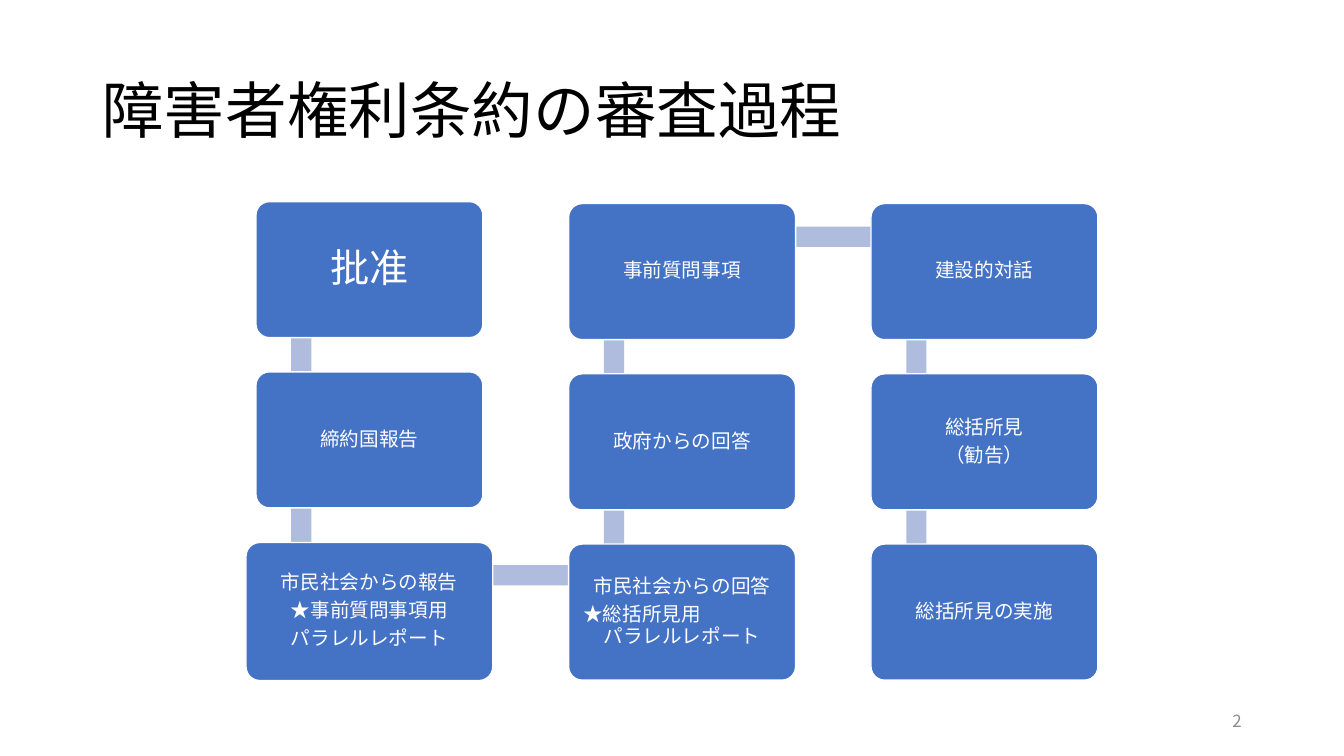
from lxml.etree import SubElement
from pptx import Presentation
from pptx.dml.color import RGBColor
from pptx.enum.shapes import MSO_SHAPE
from pptx.enum.text import MSO_ANCHOR, PP_ALIGN
from pptx.oxml.ns import qn
from pptx.util import Cm, Pt

FONT = "Noto Sans CJK JP"
BLACK = RGBColor(0x00, 0x00, 0x00)
WHITE = RGBColor(0xFF, 0xFF, 0xFF)
GREY = RGBColor(0x8C, 0x8C, 0x8C)
BLUE = RGBColor(0x44, 0x72, 0xC4)
PALE_BLUE = RGBColor(0xB0, 0xBC, 0xDE)

STEP_WIDTH, STEP_HEIGHT, ROW_PITCH = 5.72, 3.43, 4.29
BAR_THICKNESS = 0.51
COLUMNS = [
    (6.45, 5.08, ["批准", "締約国報告",
                  "市民社会からの報告\n★事前質問事項用\nパラレルレポート"]),
    (14.33, 5.13, ["事前質問事項", "政府からの回答",
                   "市民社会からの回答\n★総括所見用\nパラレルレポート"]),
    (21.95, 5.13, ["建設的対話", "総括所見\n（勧告）", "総括所見の実施"]),
]
LINKED_ROWS = [2, 0]


def format_paragraph(paragraph, size, color, alignment):
    paragraph.alignment = alignment
    font = paragraph.font
    font.name = FONT
    font.size = Pt(size)
    font.color.rgb = color
    properties = paragraph._p.pPr.find(qn("a:defRPr"))
    SubElement(properties, qn("a:ea")).set("typeface", FONT)


def add_text(slide, box, text, size, color, alignment):
    text_box = slide.shapes.add_textbox(*map(Cm, box))
    frame = text_box.text_frame
    frame.word_wrap = True
    frame.vertical_anchor = MSO_ANCHOR.MIDDLE
    frame.text = text
    paragraph = frame.paragraphs[0]
    format_paragraph(paragraph, size, color, alignment)
    return paragraph


def add_filled_shape(slide, kind, box, color):
    shape = slide.shapes.add_shape(kind, *map(Cm, box))
    shape.shadow.inherit = False
    shape.fill.solid()
    shape.fill.fore_color.rgb = color
    shape.line.fill.background()
    return shape


def add_step(slide, box, text, size=14):
    step = add_filled_shape(slide, MSO_SHAPE.ROUNDED_RECTANGLE, box, BLUE)
    step.adjustments[0] = 0.1
    step.line.color.rgb = WHITE
    step.line.width = Pt(1)
    frame = step.text_frame
    frame.word_wrap = True
    frame.vertical_anchor = MSO_ANCHOR.MIDDLE
    frame.margin_left = frame.margin_right = Cm(0.15)
    frame.margin_top = frame.margin_bottom = Cm(0.15)
    frame.text = text
    for paragraph in frame.paragraphs:
        paragraph.line_spacing = 0.9
        paragraph.space_after = Pt(size * 0.35)
        format_paragraph(paragraph, size, WHITE, PP_ALIGN.CENTER)
    return step


def add_bars(slide):
    for left, top, texts in COLUMNS:
        for row in range(len(texts) - 1):
            box = (left + 0.89, top + row * ROW_PITCH + 0.84,
                   BAR_THICKNESS, ROW_PITCH)
            add_filled_shape(slide, MSO_SHAPE.RECTANGLE, box, PALE_BLUE)
    for column, following, row in zip(COLUMNS, COLUMNS[1:], LINKED_ROWS):
        left, top = column[:2]
        box = (left + 1.17, top + row * ROW_PITCH + 0.58,
               following[0] - left, BAR_THICKNESS)
        add_filled_shape(slide, MSO_SHAPE.RECTANGLE, box, PALE_BLUE)


def add_process(slide):
    add_bars(slide)
    steps = {}
    for column, (left, top, texts) in enumerate(COLUMNS):
        for row, text in enumerate(texts):
            box = (left, top + row * ROW_PITCH, STEP_WIDTH, STEP_HEIGHT)
            if (column, row) == (0, 2):
                box = (6.2, 13.67, 6.22, 3.48)
            size = 28 if (column, row) == (0, 0) else 14
            steps[column, row] = add_step(slide, box, text, size)
    starred = steps[1, 2].text_frame.paragraphs[1]
    starred.alignment = PP_ALIGN.LEFT
    starred.space_after = Pt(0)
    starred._p.pPr.set("marL", str(Cm(0.12)))


def main():
    presentation = Presentation()
    presentation.slide_width = Cm(33.87)
    presentation.slide_height = Cm(19.05)
    slide = presentation.slides.add_slide(presentation.slide_layouts[6])
    title = add_text(slide, (2.33, 1.01, 29.21, 3.68),
                     "障害者権利条約の審査過程", 44, BLACK, PP_ALIGN.LEFT)
    title.line_spacing = 0.9
    add_process(slide)
    add_text(slide, (23.92, 17.66, 7.62, 1.01), "2", 12, GREY, PP_ALIGN.RIGHT)
    presentation.save("out.pptx")


if __name__ == "__main__":
    main()
